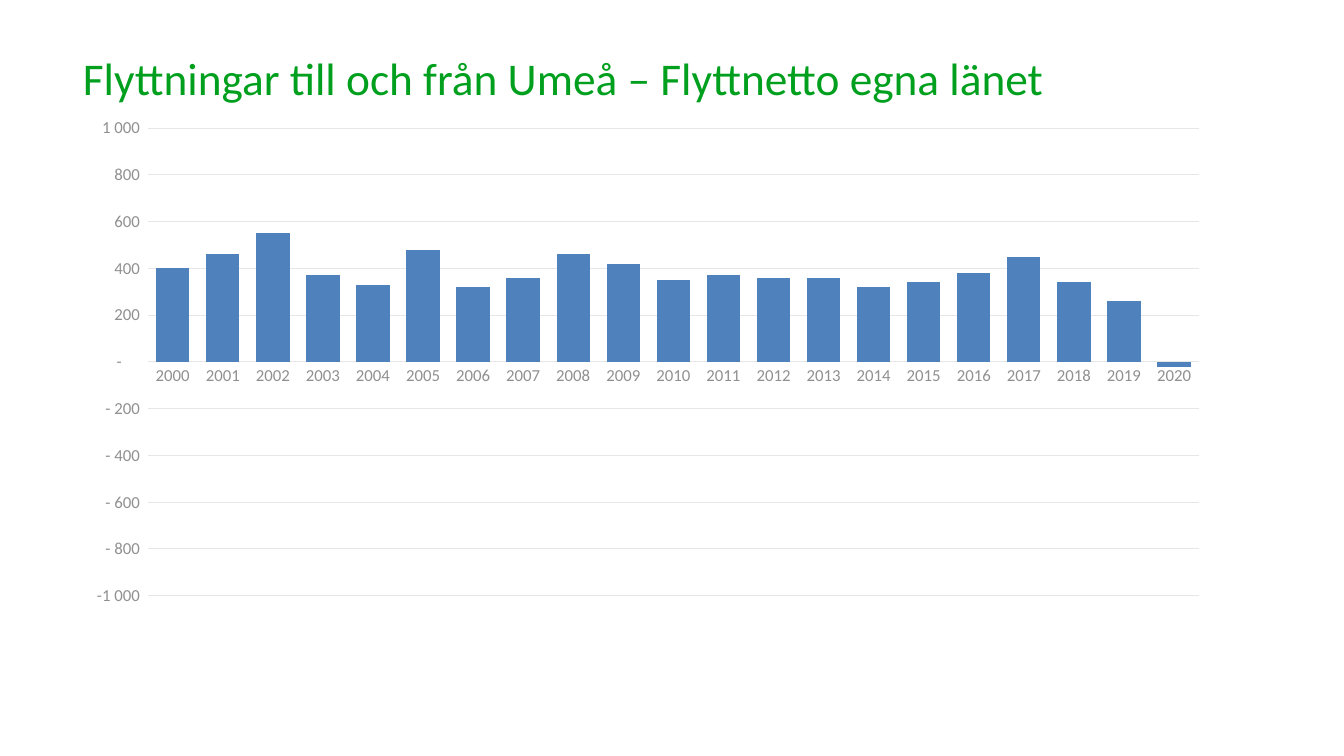
from dataclasses import dataclass

from pptx import Presentation
from pptx.chart.data import CategoryChartData
from pptx.dml.color import RGBColor
from pptx.enum.chart import XL_CHART_TYPE, XL_TICK_LABEL_POSITION, XL_TICK_MARK
from pptx.enum.text import MSO_ANCHOR
from pptx.util import Emu, Pt

STACKED = XL_CHART_TYPE.COLUMN_STACKED
NEXT_TO_AXIS = XL_TICK_LABEL_POSITION.NEXT_TO_AXIS
NO_TICK = XL_TICK_MARK.NONE
BOTTOM = MSO_ANCHOR.BOTTOM

PX_PER_INCH = 100.8
FIRST_YEAR = 2000
NET_MOVES = [400, 460, 550, 370, 330, 480, 320, 360, 460, 420, 350,
             370, 360, 360, 320, 340, 380, 450, 340, 260, -20]
COUNT_FORMAT = r'_-* #\ ##0_-;\-* #\ ##0_-;_-* "-"??_-;_-@_-'


@dataclass(frozen=True)
class Theme:
    font: str = "Calibri"
    title: RGBColor = RGBColor(0x00, 0xA0, 0x1E)
    chart_text: RGBColor = RGBColor(0x55, 0x55, 0x55)
    axis_text: RGBColor = RGBColor(0x90, 0x90, 0x90)
    grid: RGBColor = RGBColor(0xE6, 0xE6, 0xE6)
    bars: RGBColor = RGBColor(0x4F, 0x81, 0xBD)
    title_size: float = 32.4
    chart_size: float = 10
    axis_size: float = 12
    line_width: float = 0.75


THEME = Theme()


def px(length):
    return Emu(round(length * 914400 / PX_PER_INCH))


def style_font(font, size, color):
    font.name = THEME.font
    font.size = Pt(size)
    font.color.rgb = color


def style_line(line):
    line.color.rgb = THEME.grid
    line.width = Pt(THEME.line_width)


def style_axis(axis):
    axis.major_tick_mark = NO_TICK
    axis.minor_tick_mark = NO_TICK
    axis.tick_label_position = NEXT_TO_AXIS
    style_font(axis.tick_labels.font, THEME.axis_size, THEME.axis_text)


def add_title(slide, wording, left, top, width, height):
    frame = slide.shapes.add_textbox(px(left), px(top), px(width), px(height)).text_frame
    frame.word_wrap = True
    frame.vertical_anchor = BOTTOM
    frame.margin_bottom = 0
    heading = frame.paragraphs[0]
    heading.text = wording
    heading.space_after = Pt(6)
    style_font(heading.font, THEME.title_size, THEME.title)


def add_moves_chart(slide, left, top, width, height):
    moves = CategoryChartData()
    moves.categories = [str(FIRST_YEAR + i) for i in range(len(NET_MOVES))]
    moves.add_series("Series 1", NET_MOVES)
    chart = slide.shapes.add_chart(
        STACKED, px(left), px(top), px(width), px(height), moves).chart
    chart.has_legend = False
    chart.has_title = False
    style_font(chart.font, THEME.chart_size, THEME.chart_text)

    # Bars
    plot = chart.plots[0]
    plot.gap_width = 50
    plot.overlap = 100
    plot.vary_by_categories = False
    bars = plot.series[0]
    bars.invert_if_negative = False
    bars.format.fill.solid()
    bars.format.fill.fore_color.rgb = THEME.bars

    # Years
    years = chart.category_axis
    style_axis(years)
    years.has_major_gridlines = False
    style_line(years.format.line)

    # Number of moves
    counts = chart.value_axis
    style_axis(counts)
    counts.minimum_scale = -1000
    counts.maximum_scale = 1000
    counts.major_unit = 200
    counts.tick_labels.number_format = COUNT_FORMAT
    counts.tick_labels.number_format_is_linked = False
    counts.format.line.fill.background()
    style_line(counts.major_gridlines.format.line)


def main():
    deck = Presentation()
    deck.slide_width, deck.slide_height = px(1344), px(756)
    slide = deck.slides.add_slide(deck.slide_layouts[6])
    add_title(slide, "Flyttningar till och från Umeå – Flyttnetto egna länet",
              73, 42, 1148, 63)
    add_moves_chart(slide, 74, 108, 1148, 508)
    deck.save("out.pptx")


if __name__ == "__main__":
    main()
